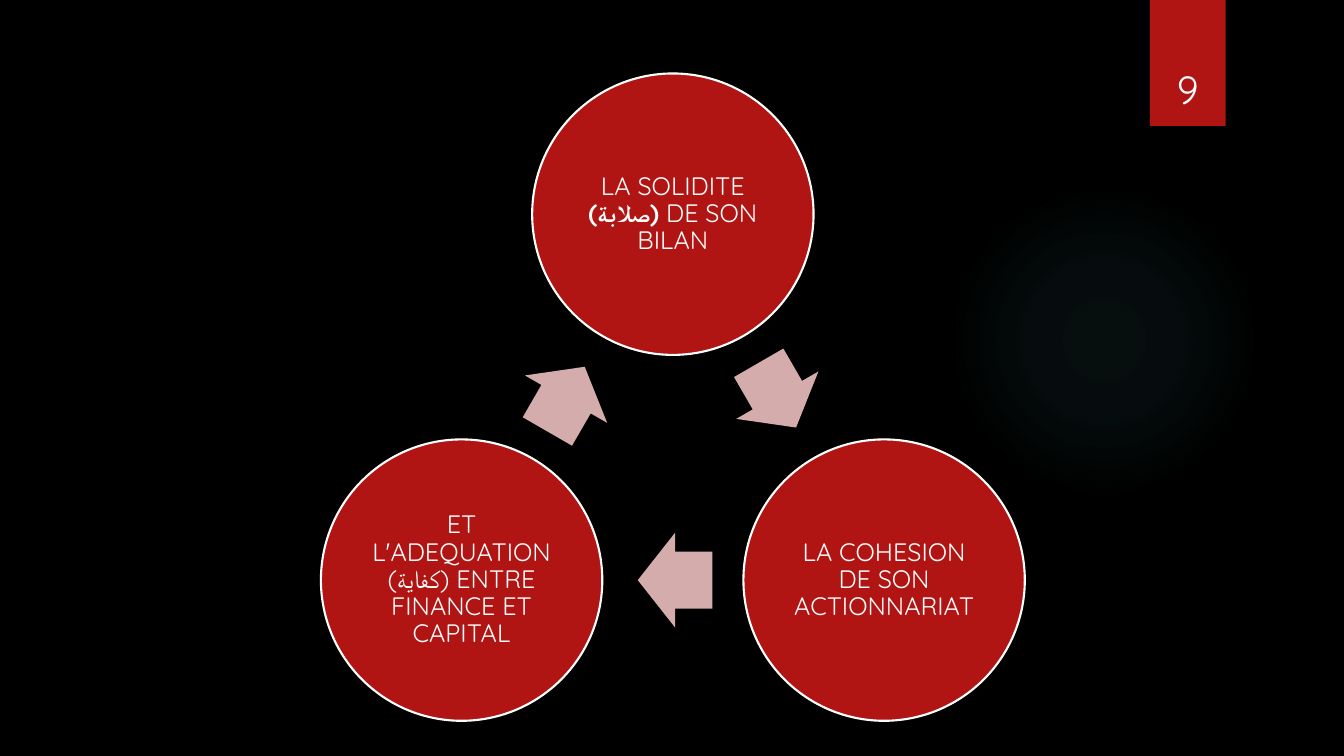
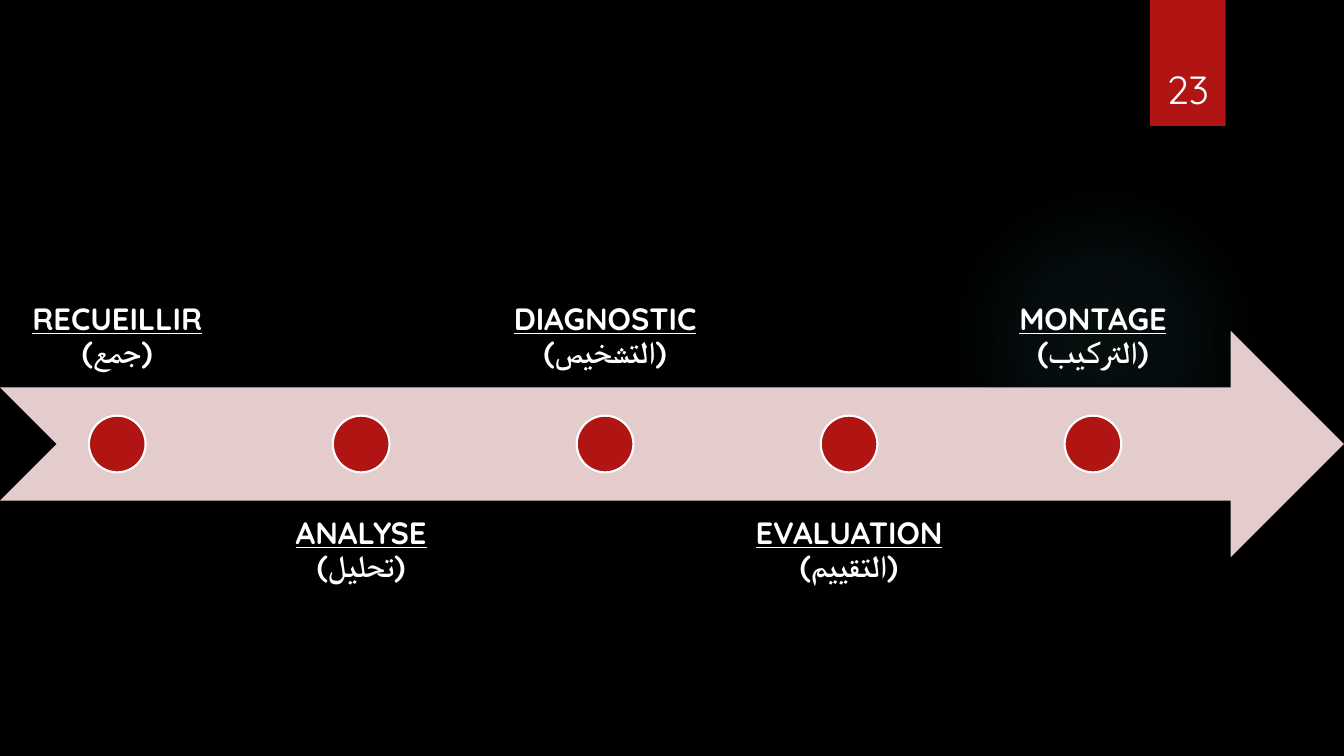
"""Build two dark slides: a three-part cycle and a five-step timeline."""
from math import cos, radians, sin

from lxml import etree
from pptx import Presentation
from pptx.dml.color import RGBColor
from pptx.enum.shapes import MSO_SHAPE
from pptx.enum.text import MSO_ANCHOR, PP_ALIGN
from pptx.oxml.ns import qn
from pptx.util import Inches, Pt

ELLIPSE = MSO_SHAPE.OVAL
RECTANGLE = MSO_SHAPE.RECTANGLE
ARROW = MSO_SHAPE.RIGHT_ARROW
NOTCHED_ARROW = MSO_SHAPE.NOTCHED_RIGHT_ARROW
TOP, MIDDLE, BOTTOM = MSO_ANCHOR.TOP, MSO_ANCHOR.MIDDLE, MSO_ANCHOR.BOTTOM
CENTER = PP_ALIGN.CENTER

BLACK = RGBColor(0x00, 0x00, 0x00)
WHITE = RGBColor(0xFF, 0xFF, 0xFF)
RED = RGBColor(0xB0, 0x15, 0x13)
ROSE = RGBColor(0xD4, 0xAC, 0xAB)
PALE_ROSE = RGBColor(0xE4, 0xCC, 0xCC)
TEAL = RGBColor(0x50, 0xB9, 0xC1)
FONT = "Quicksand"

COLUMNS, ROWS = 160, 90
SLIDE_WIDTH, SLIDE_HEIGHT = Inches(13.33), Inches(7.5)
BOLD = {"bold": True}
HEADING = {"bold": True, "underline": True}


def write_text(shape, runs, size, anchor=MIDDLE, inset=0.03, bottom=None, spacing=0.9):
    """Write (text, font settings) runs as one centred paragraph."""
    frame = shape.text_frame
    frame.word_wrap = True
    frame.vertical_anchor = anchor
    frame.margin_left = frame.margin_right = frame.margin_top = Inches(inset)
    frame.margin_bottom = Inches(inset if bottom is None else bottom)
    paragraph = frame.paragraphs[0]
    paragraph.alignment = CENTER
    paragraph.line_spacing = spacing
    for text, settings in runs:
        run = paragraph.add_run()
        run.text = text
        run.font.name = FONT
        run.font.size = Pt(size)
        run.font.color.rgb = WHITE
        run.font.bold = settings.get("bold", False)
        run.font.underline = settings.get("underline", False)


class Deck:
    """Hold the shared style and the current slide, on a grid of 160 by 90."""

    def __init__(self):
        """Start a presentation with a black master."""
        self.presentation = Presentation()
        self.presentation.slide_width = SLIDE_WIDTH
        self.presentation.slide_height = SLIDE_HEIGHT
        background = self.presentation.slide_master.background.fill
        background.solid()
        background.fore_color.rgb = BLACK
        self.slide = None

    def box(self, column, row, width, height):
        """Turn grid units into slide lengths."""
        across, down = SLIDE_WIDTH / COLUMNS, SLIDE_HEIGHT / ROWS
        return (round(column * across), round(row * down),
                round(width * across), round(height * down))

    def add_slide(self, number):
        """Add a slide with its glow and its number band."""
        layout = self.presentation.slide_layouts[6]
        self.slide = self.presentation.slides.add_slide(layout)
        self.add_glow(112.9, 22, 37)
        band = self.add_shape(RECTANGLE, 136.9, 0, 9, 15, RED)
        write_text(band, [(str(number), {})], 28, BOTTOM, 0.05, 0.14, 1)

    def add_shape(self, kind, column, row, width, height, color):
        """Add a flat shape without outline."""
        shape = self.slide.shapes.add_shape(kind, *self.box(column, row, width, height))
        shape.shadow.inherit = False
        shape.fill.solid()
        shape.fill.fore_color.rgb = color
        shape.line.fill.background()
        return shape

    def add_glow(self, column, row, diameter):
        """Add a disc that fades out from its centre."""
        glow = self.add_shape(ELLIPSE, column, row, diameter, diameter, TEAL)
        properties = glow.fill._xPr
        gradient = etree.Element(qn("a:gradFill"), rotWithShape="1")
        stops = etree.SubElement(gradient, qn("a:gsLst"))
        for position, opacity in ((0, 7), (36, 6), (69, 0)):
            stop = etree.SubElement(stops, qn("a:gs"), pos=str(position * 1000))
            color = etree.SubElement(stop, qn("a:srgbClr"), val=str(TEAL))
            etree.SubElement(color, qn("a:alpha"), val=str(opacity * 1000))
        shading = etree.SubElement(gradient, qn("a:path"), path="circle")
        etree.SubElement(shading, qn("a:fillToRect"), l="50000", t="50000", r="50000", b="50000")
        properties.replace(properties.find(qn("a:solidFill")), gradient)

    def add_disc(self, x, y, diameter):
        """Add a red disc with a white outline around a centre."""
        disc = self.add_shape(ELLIPSE, x - diameter / 2, y - diameter / 2,
                              diameter, diameter, RED)
        disc.line.color.rgb = WHITE
        disc.line.width = Pt(1.5)
        return disc

    def add_arrow(self, x, y, angle):
        """Add a turned block arrow around a centre."""
        width, height = 8.9, 11.3
        arrow = self.add_shape(ARROW, x - width / 2, y - height / 2, width, height, ROSE)
        arrow.adjustments[0], arrow.adjustments[1] = 0.6, 0.5
        arrow.rotation = angle

    def add_label(self, column, row, width, height, runs, anchor):
        """Add a text box for one step."""
        label = self.slide.shapes.add_textbox(*self.box(column, row, width, height))
        write_text(label, runs, 22, anchor, 0.17)

    def add_cycle(self, parts):
        """Set discs evenly on a ring, with an arrow from each to the next."""
        center_x, center_y, radius, diameter, lag = 80.1, 54.54, 29.04, 33.5, 0.27
        step = 360 / len(parts)
        for index, runs in enumerate(parts):
            angle = radians(index * step - 90)
            disc = self.add_disc(center_x + radius * cos(angle),
                                 center_y + radius * sin(angle), diameter)
            write_text(disc, runs, 18)
            middle = angle + radians(step / 2)
            distance = radius * cos(radians(step / 2))
            turn = middle + radians(90)
            self.add_arrow(center_x + distance * cos(middle) - lag * cos(turn),
                           center_y + distance * sin(middle) - lag * sin(turn),
                           (index + 0.5) * step)

    def add_timeline(self, steps):
        """Set dots along an arrow, with labels above and below in turn."""
        top, height, pitch, width = 39.36, 27, 29.04, 27.72
        self.add_shape(NOTCHED_ARROW, 0, top, COLUMNS, height, PALE_ROSE)
        for index, (name, translation) in enumerate(steps):
            column = 0.1 + index * pitch
            above = index % 2 == 0
            row = top + height * (-0.75 if above else 0.75)
            runs = [(name, HEADING), (" ", {}), (f"({translation})", BOLD)]
            self.add_label(column, row, width, height, runs, BOTTOM if above else TOP)
            self.add_disc(column + width / 2, top + height / 2, height / 4)


def main():
    """Build and save the slides."""
    deck = Deck()
    deck.add_slide(9)
    deck.add_cycle([
        [("LA SOLIDITE ", {}), ("(صلابة) ", BOLD), ("DE SON BILAN", {})],
        [("LA COHESION DE SON ACTIONNARIAT", {})],
        [("ET L'ADEQUATION (كفاية) ENTRE FINANCE ET CAPITAL", {})],
    ])
    deck.add_slide(23)
    deck.add_timeline([
        ("RECUEILLIR", "جمع"),
        ("ANALYSE", "تحليل"),
        ("DIAGNOSTIC", "التشخيص"),
        ("EVALUATION", "التقييم"),
        ("MONTAGE", "التركيب"),
    ])
    deck.presentation.save("out.pptx")


if __name__ == "__main__":
    main()
